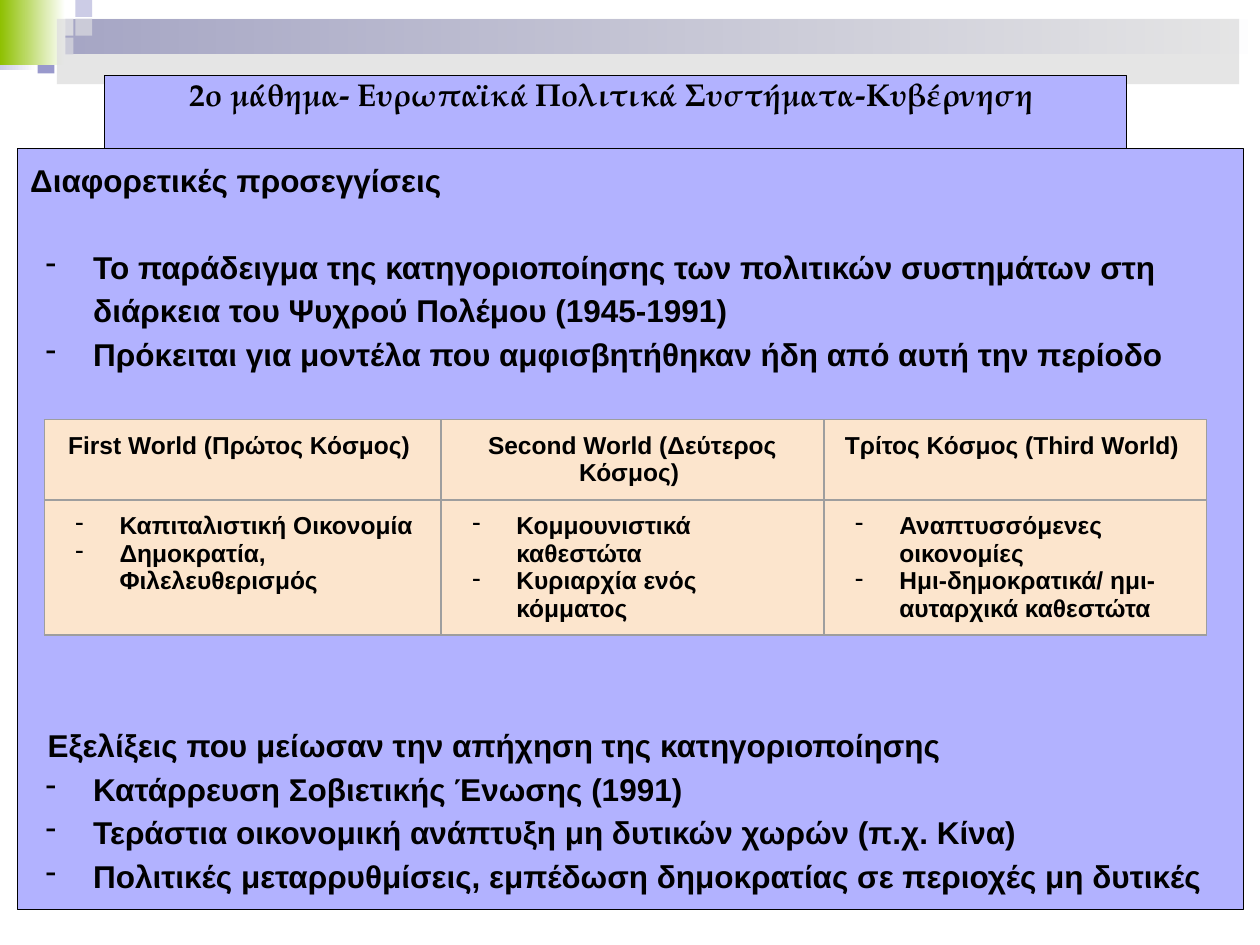
from lxml.etree import SubElement
from pptx import Presentation
from pptx.dml.color import RGBColor
from pptx.enum.shapes import MSO_SHAPE
from pptx.enum.text import MSO_ANCHOR, PP_ALIGN
from pptx.oxml import parse_xml
from pptx.oxml.ns import nsdecls, qn
from pptx.util import Cm, Pt

BLACK = RGBColor(0x00, 0x00, 0x00)
WHITE = RGBColor(0xFF, 0xFF, 0xFF)
PANEL = RGBColor(0xB2, 0xB2, 0xFF)
CREAM = RGBColor(0xFC, 0xE5, 0xCD)
NAVY = RGBColor(0x00, 0x00, 0x7D)
LAVENDER = RGBColor(0xCC, 0xCC, 0xE6)
VIOLET = RGBColor(0x99, 0x99, 0xCC)
GREEN = RGBColor(0x8E, 0xC0, 0x00)
SILVER = RGBColor(0xDD, 0xDD, 0xDD)
BORDER = RGBColor(0x9E, 0x9E, 0x9E)

LINE_PITCH = 24.85
TITLE = "2ο μάθημα- Ευρωπαϊκά Πολιτικά Συστήματα-Κυβέρνηση "
BULLET = {"indent": 1.27, "hanging": 0.96, "bullet": "-"}
BODY = [
    ("Διαφορετικές προσεγγίσεις", {}),
    ("Το παράδειγμα της κατηγοριοποίησης των πολιτικών συστημάτων στη "
     "διάρκεια του Ψυχρού Πολέμου (1945-1991)", {**BULLET, "before": LINE_PITCH}),
    ("Πρόκειται για μοντέλα που αμφισβητήθηκαν ήδη από αυτή την περίοδο", BULLET),
    ("Εξελίξεις που μείωσαν την απήχηση της κατηγοριοποίησης",
     {"indent": 0.35, "before": 8 * LINE_PITCH}),
    ("Κατάρρευση Σοβιετικής Ένωσης (1991)", BULLET),
    ("Τεράστια οικονομική ανάπτυξη μη δυτικών χωρών (π.χ. Κίνα)", BULLET),
    ("Πολιτικές μεταρρυθμίσεις, εμπέδωση δημοκρατίας σε περιοχές μη δυτικές", BULLET),
]
WORLDS = [
    ("First World (Πρώτος Κόσμος) ",
     ["Καπιταλιστική Οικονομία", "Δημοκρατία, Φιλελευθερισμός"]),
    ("Second World (Δεύτερος Κόσμος) ",
     ["Κομμουνιστικά καθεστώτα", "Κυριαρχία ενός κόμματος"]),
    ("Τρίτος Κόσμος (Third World) ",
     ["Αναπτυσσόμενες οικονομίες", "Ημι-δημοκρατικά/ ημι-αυταρχικά καθεστώτα"]),
]
COLUMN_WIDTHS = [8.0, 7.72, 7.72]
ROW_HEIGHTS = [1.62, 2.72]

STEP = 0.38
SIDE = 0.34
SQUARES = [
    (3, 1, LAVENDER), (4, 0, LAVENDER), (4, 1, VIOLET), (2, 2, LAVENDER),
    (1, 1, NAVY), (3, 2, VIOLET), (2, 3, VIOLET),
]


def add_text(frame, text, first=False, size=18, font="Arial", align=PP_ALIGN.LEFT,
             indent=0, hanging=0, bullet=None, before=0, pitch=None):
    paragraph = frame.paragraphs[0] if first else frame.add_paragraph()
    paragraph.alignment = align
    paragraph.space_before = Pt(before)
    paragraph.space_after = Pt(0)
    if pitch:
        paragraph.line_spacing = Pt(pitch)
    properties = paragraph._p.get_or_add_pPr()
    properties.set("marL", str(Cm(indent)))
    properties.set("indent", str(-Cm(hanging)))
    if bullet:
        color = SubElement(properties, qn("a:buClr"))
        SubElement(color, qn("a:srgbClr")).set("val", str(BLACK))
        SubElement(properties, qn("a:buChar")).set("char", bullet)
    else:
        SubElement(properties, qn("a:buNone"))
    run = paragraph.add_run()
    run.text = text
    run.font.name = font
    run.font.size = Pt(size)
    run.font.bold = True
    run.font.color.rgb = BLACK


def paint(shape, color, fade=False, alpha=None, outlined=False):
    if fade:
        shape.fill.gradient()
        shape.fill.gradient_angle = 0
        for stop, tone in zip(shape.fill.gradient_stops, (color, WHITE)):
            stop.color.rgb = tone
    else:
        shape.fill.solid()
        shape.fill.fore_color.rgb = color
    if alpha:
        tone = shape._element.spPr.find(qn("a:solidFill")).find(qn("a:srgbClr"))
        SubElement(tone, qn("a:alpha")).set("val", str(alpha * 1000))
    if outlined:
        shape.line.color.rgb = BLACK
        shape.line.width = Pt(0.75)
    else:
        shape.line.fill.background()


def add_rectangle(slide, left, top, width, height, color, **style):
    shape = slide.shapes.add_shape(
        MSO_SHAPE.RECTANGLE, Cm(left), Cm(top), Cm(width), Cm(height))
    shape.shadow.inherit = False
    paint(shape, color, **style)
    return shape


def set_frame(frame, anchor, horizontal, vertical):
    frame.word_wrap = True
    frame.vertical_anchor = anchor
    frame.margin_left = frame.margin_right = Cm(horizontal)
    frame.margin_top = frame.margin_bottom = Cm(vertical)


def format_cell(cell):
    cell.margin_left = cell.margin_right = Cm(0.25)
    cell.margin_top = cell.margin_bottom = Cm(0.25)
    cell.vertical_anchor = MSO_ANCHOR.TOP
    cell.fill.solid()
    cell.fill.fore_color.rgb = CREAM
    properties = cell._tc.get_or_add_tcPr()
    for position, edge in enumerate(("lnL", "lnR", "lnT", "lnB")):
        properties.insert(position, parse_xml(
            f'<a:{edge} {nsdecls("a")} w="{Pt(0.75)}"><a:solidFill>'
            f'<a:srgbClr val="{BORDER}"/></a:solidFill></a:{edge}>'))


def add_decoration(slide):
    add_rectangle(slide, 0, 0, 0.74, 1.42, LAVENDER, fade=True)
    add_rectangle(slide, 1.15, STEP, 24.2, 0.71, NAVY, fade=True)
    for column, row, color in SQUARES:
        add_rectangle(slide, column * STEP, row * STEP, SIDE, SIDE, color)
    add_rectangle(slide, 0, 0, 1.32, 1.32, GREEN, fade=True)
    add_rectangle(slide, 1.15, STEP, 23.83, 1.32, SILVER, alpha=75)


def add_body(slide):
    body = add_rectangle(slide, 0.36, 3.0, 24.71, 15.34, PANEL, outlined=True)
    set_frame(body.text_frame, MSO_ANCHOR.TOP, 0.25, 0.13)
    for index, (text, style) in enumerate(BODY):
        add_text(body.text_frame, text, first=index == 0, pitch=LINE_PITCH, **style)


def format_title(slide):
    title = slide.shapes.title
    title.left, title.top, title.width, title.height = (
        Cm(2.11), Cm(1.52), Cm(20.6), Cm(1.47))
    paint(title, PANEL, outlined=True)
    set_frame(title.text_frame, MSO_ANCHOR.TOP, 0.25, 0)
    add_text(title.text_frame, TITLE, first=True, font="TeX Gyre Pagella",
             align=PP_ALIGN.CENTER)
    slide.shapes._spTree.append(title._element)


def add_worlds_table(slide):
    table = slide.shapes.add_table(
        2, len(WORLDS), Cm(0.89), Cm(8.46),
        Cm(sum(COLUMN_WIDTHS)), Cm(sum(ROW_HEIGHTS))).table
    table.first_row = table.horz_banding = False
    for column, width in zip(table.columns, COLUMN_WIDTHS):
        column.width = Cm(width)
    for row, height in zip(table.rows, ROW_HEIGHTS):
        row.height = Cm(height)
    for column, (heading, features) in enumerate(WORLDS):
        header, details = table.cell(0, column), table.cell(1, column)
        format_cell(header)
        format_cell(details)
        add_text(header.text_frame, heading, first=True, size=14,
                 align=PP_ALIGN.CENTER)
        for index, feature in enumerate(features):
            add_text(details.text_frame, feature, first=index == 0, size=14,
                     indent=1.27, hanging=0.89, bullet="-")


def main():
    presentation = Presentation()
    presentation.slide_width, presentation.slide_height = Cm(25.4), Cm(19.05)
    slide = presentation.slides.add_slide(presentation.slide_layouts[5])
    add_decoration(slide)
    add_body(slide)
    format_title(slide)
    add_worlds_table(slide)
    presentation.save("out.pptx")


if __name__ == "__main__":
    main()
